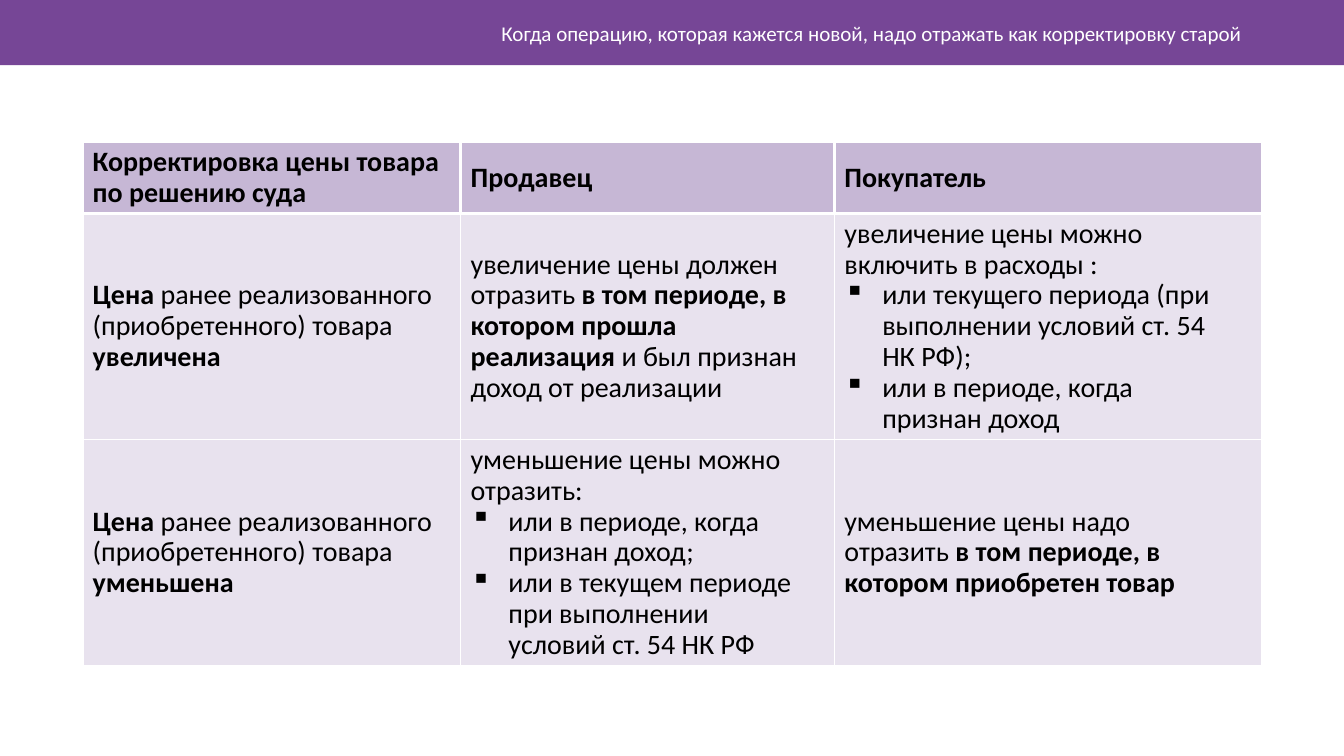
from lxml import etree
from pptx import Presentation
from pptx.dml.color import RGBColor
from pptx.enum.shapes import MSO_SHAPE
from pptx.enum.text import MSO_ANCHOR, PP_ALIGN
from pptx.oxml.ns import qn
from pptx.util import Pt

RECTANGLE = MSO_SHAPE.RECTANGLE
MIDDLE = MSO_ANCHOR.MIDDLE
RIGHT = PP_ALIGN.RIGHT

PURPLE = RGBColor(0x76, 0x46, 0x96)
HEADER_FILL = RGBColor(0xC6, 0xB7, 0xD5)
BODY_FILL = RGBColor(0xE8, 0xE2, 0xEE)
WHITE = RGBColor(0xFF, 0xFF, 0xFF)
BLACK = RGBColor(0, 0, 0)
FONT = "Calibri"
BULLET = "▪"

TITLE = "Когда операцию, которая кажется новой, надо отражать как корректировку старой"
COLUMN_WIDTHS = [270, 267, 306]
ROW_HEIGHTS = [51, 161.5, 161.5]
# **bold**
ROWS = [
    [
        ["**Корректировка цены товара по решению суда**"],
        ["**Продавец**"],
        ["**Покупатель**"],
    ],
    [
        ["**Цена** ранее реализованного (приобретенного) товара **увеличена**"],
        ["увеличение цены должен отразить **в том периоде, в котором прошла "
         "реализация **и был признан доход от реализации"],
        ["увеличение цены можно включить в расходы :",
         "▪или текущего периода (при выполнении условий ст. 54 НК РФ);",
         "▪или в периоде, когда признан доход"],
    ],
    [
        ["**Цена** ранее реализованного (приобретенного) товара **уменьшена**"],
        ["уменьшение цены можно отразить:",
         "▪или в периоде, когда признан доход;",
         "▪или в текущем периоде при выполнении условий ст. 54 НК РФ"],
        ["уменьшение цены надо отразить **в том периоде, в котором приобретен товар**"],
    ],
]


def set_font(font, size, color):
    font.name = FONT
    font.size = Pt(size)
    font.color.rgb = color


def add_banner(page, left, top, width, height):
    bar = page.shapes.add_shape(RECTANGLE, Pt(left), Pt(top), Pt(width), Pt(height))
    bar.shadow.inherit = False
    bar.fill.solid()
    bar.fill.fore_color.rgb = PURPLE
    bar.line.fill.background()

    box = page.shapes.add_textbox(Pt(left + 255), Pt(top + 9), Pt(639), Pt(29))
    frame = box.text_frame
    frame.word_wrap = True
    frame.vertical_anchor = MIDDLE
    para = frame.paragraphs[0]
    para.text = TITLE
    para.alignment = RIGHT
    set_font(para.font, 15, WHITE)


def add_bullet(para):
    properties = para._p.get_or_add_pPr()
    properties.set("marL", str(Pt(27)))
    properties.set("indent", str(-Pt(27)))
    etree.SubElement(properties, qn("a:buChar"), char=BULLET)


def fill_paragraph(para, text):
    para.line_spacing = 0.9
    if text.startswith(BULLET):
        add_bullet(para)
        text = text[len(BULLET):]
    set_font(para.font, 20, BLACK)
    for index, part in enumerate(text.split("**")):
        if part:
            span = para.add_run()
            span.text = part
            set_font(span.font, 20, BLACK)
            span.font.bold = index % 2 == 1


def add_border(cell, side, width):
    line = etree.SubElement(cell._tc.get_or_add_tcPr(), qn("a:" + side), w=str(Pt(width)))
    fill = etree.SubElement(line, qn("a:solidFill"))
    etree.SubElement(fill, qn("a:srgbClr"), val=str(WHITE))


def style_cell(cell, row, column):
    side_width = 2.25 if row == 0 else 1
    widths = {
        "lnL": 2.25 if column == 0 else side_width,
        "lnR": 2.25 if column == len(COLUMN_WIDTHS) - 1 else side_width,
        "lnT": 1 if row == 2 else 2.25,
        "lnB": 2.25 if row == 0 else 1,
    }
    for side, width in widths.items():
        add_border(cell, side, width)
    cell.fill.solid()
    cell.fill.fore_color.rgb = BODY_FILL if row else HEADER_FILL
    cell.vertical_anchor = MIDDLE
    if row and column:
        cell.margin_right = Pt(20)


def add_price_table(page, left, top):
    frame = page.shapes.add_table(
        len(ROWS), len(COLUMN_WIDTHS), Pt(left), Pt(top),
        Pt(sum(COLUMN_WIDTHS)), Pt(sum(ROW_HEIGHTS)))
    table = frame.table
    for column, width in zip(table.columns, COLUMN_WIDTHS):
        column.width = Pt(width)
    for row, height in zip(table.rows, ROW_HEIGHTS):
        row.height = Pt(height)
    for row, contents in enumerate(ROWS):
        for column, texts in enumerate(contents):
            cell = table.cell(row, column)
            style_cell(cell, row, column)
            for index, text in enumerate(texts):
                text_frame = cell.text_frame
                para = text_frame.add_paragraph() if index else text_frame.paragraphs[0]
                fill_paragraph(para, text)


def main():
    deck = Presentation()
    deck.slide_width = Pt(960)
    deck.slide_height = Pt(540)
    page = deck.slides.add_slide(deck.slide_layouts[6])
    add_banner(page, 0, 0, 960, 46.5)
    add_price_table(page, 59, 101.5)
    deck.save("out.pptx")


if __name__ == "__main__":
    main()
